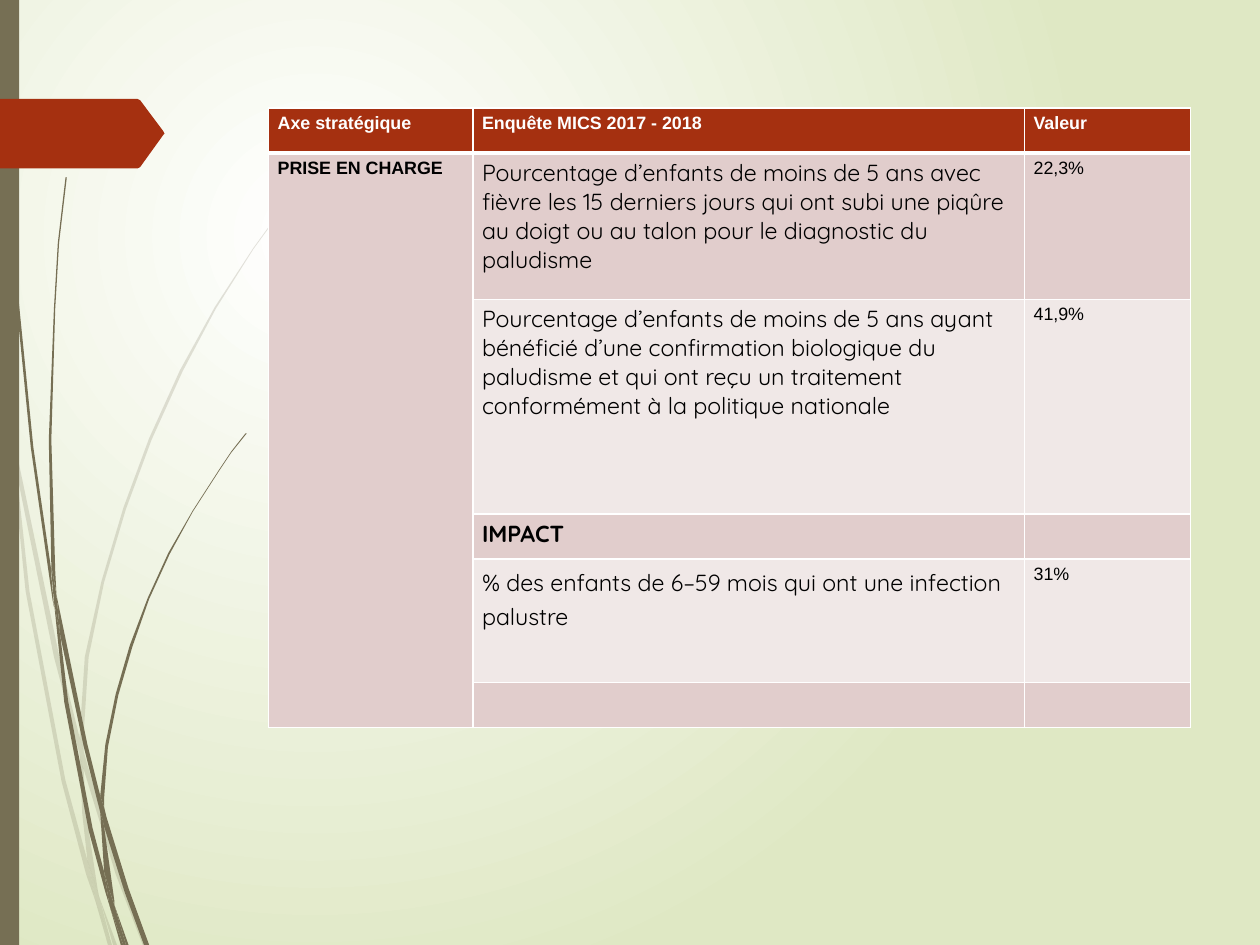
"""Build a slide with a malaria survey table beside a grass motif."""
from dataclasses import dataclass

from lxml import etree
from pptx import Presentation, util as u
from pptx.dml.color import RGBColor
from pptx.enum import shapes
from pptx.oxml import ns

Point = tuple[float, float]


@dataclass(frozen=True)
class Theme:
    olive: str = "766F54"
    brick: str = "A53010"
    rose: str = "E1CDCC"
    pale: str = "F0E8E7"
    white: str = "FFFFFF"
    black: str = "000000"
    meadow: str = "DFE8C4"
    label_font: str = "Arial"
    body_font: str = "Quicksand"
    label_size: int = 10
    body_size: int = 13
    rule: int = 1
    header_rule: int = 3


@dataclass(frozen=True)
class Cell:
    text: str = ""
    body: bool = False
    bold: bool = False
    spacing: float | None = None


@dataclass(frozen=True)
class Row:
    height: float
    cells: tuple[Cell, ...]


T = Theme()
WIDTH, HEIGHT = 9.8, 7.35
COLUMNS = (1.59, 4.29, 1.29)

ROWS = (
    Row(0.35, (Cell("Axe stratégique", bold=True), Cell("Enquête MICS 2017 - 2018", bold=True),
               Cell("Valeur", bold=True))),
    Row(1.14, (Cell("PRISE EN CHARGE", bold=True),
               Cell("Pourcentage d’enfants de moins de 5 ans avec fièvre les 15 derniers jours qui ont "
                    "subi une piqûre au doigt ou au talon pour le diagnostic du paludisme", body=True),
               Cell("22,3%"))),
    Row(1.67, (Cell(),
               Cell("Pourcentage d’enfants de moins de 5 ans ayant bénéficié d’une confirmation biologique "
                    "du paludisme et qui ont reçu un traitement conformément à la politique nationale",
                    body=True),
               Cell("41,9%"))),
    Row(0.35, (Cell(), Cell("IMPACT", body=True, bold=True), Cell())),
    Row(0.96, (Cell(),
               Cell("% des enfants de 6–59 mois qui ont une infection palustre", body=True, spacing=1.15),
               Cell("31%"))),
    Row(0.35, (Cell(), Cell(), Cell())),
)

FAINT_BLADES: tuple[tuple[Point, ...], ...] = (
    ((0.08, 3.43), (0.06, 3.15), (0, 2.76), (0, 2.93), (0.07, 3.37)),
    ((0.42, 5.11), (0.62, 5.87), (0.62, 5.74), (0.46, 5.1), (0.1, 3.38), (0.13, 3.68)),
    ((0.68, 5.95), (0.65, 5.84), (0.65, 5.98), (0.9, 6.8), (1.11, 7.35), (1.14, 7.35), (0.93, 6.78)),
    ((0.88, 7.35), (0.91, 7.35), (0.77, 6.97)),
    ((0.68, 6.69), (0.51, 6.07), (0.23, 4.6), (0.13, 3.68), (0.08, 3.43), (0.2, 4.6), (0.48, 6.08),
     (0.67, 6.8), (0.74, 7), (0.73, 6.93)),
    ((0.62, 5.87), (0.64, 6.33), (0.68, 6.69), (0.71, 6.78), (0.77, 6.97), (0.76, 6.92), (0.67, 6.33),
     (0.65, 5.98), (0.64, 5.96)),
    ((0.65, 5.72), (0.69, 5.11), (0.81, 4.53), (0.98, 3.96), (1.18, 3.42), (1.42, 2.89), (1.68, 2.4),
     (1.97, 1.94), (2.13, 1.72), (2.29, 1.5), (2.13, 1.71), (1.97, 1.93), (1.67, 2.39), (1.4, 2.88),
     (1.16, 3.41), (0.96, 3.95), (0.79, 4.52), (0.66, 5.11), (0.62, 5.72), (0.62, 5.74), (0.65, 5.84)),
    ((0.74, 7), (0.84, 7.35), (0.87, 7.35)),
    ((0.64, 5.96), (0.65, 5.98), (0.65, 5.84), (0.62, 5.74), (0.62, 5.87)),
    ((0.71, 6.78), (0.68, 6.69), (0.73, 6.93), (0.74, 7), (0.87, 7.35), (0.77, 6.97)),
)

BLADES: tuple[tuple[Point, ...], ...] = (
    ((0.05, 1.08), (0.12, 2.28), (0.24, 3.48), (0.41, 4.67), (0.42, 4.72), (0.4, 4.48), (0.4, 4.44),
     (0.26, 3.48), (0.14, 2.28), (0.06, 1.07), (0.03, 0.47), (0.03, 0), (0.02, 0), (0.03, 0.47)),
    ((0.65, 5.8), (0.78, 6.32), (0.78, 6.21), (0.78, 6.19), (0.68, 5.79), (0.44, 4.63), (0.47, 4.95)),
    ((0.83, 6.36), (0.81, 6.28), (0.81, 6.43), (0.97, 6.94), (1.12, 7.35), (1.16, 7.35), (1, 6.91)),
    ((0.81, 6.78), (0.72, 6.44), (0.53, 5.45), (0.47, 4.95), (0.42, 4.68), (0.5, 5.46), (0.69, 6.46),
     (0.82, 6.94), (0.86, 7.07), (0.85, 7.03)),
    ((0.44, 4.63), (0.43, 4.44), (0.4, 3.42), (0.43, 2.4), (0.46, 1.89), (0.52, 1.38), (0.51, 1.38),
     (0.45, 1.89), (0.42, 2.4), (0.38, 3.42), (0.4, 4.4), (0.44, 4.62)),
    ((0.98, 7.35), (1, 7.35), (0.89, 7.04)),
    ((0.42, 4.68), (0.47, 4.95), (0.44, 4.63), (0.4, 4.4), (0.4, 4.44)),
    ((0.81, 6.21), (0.84, 5.81), (0.92, 5.41), (1.03, 5.03), (1.16, 4.66), (1.32, 4.31), (1.5, 3.98),
     (1.7, 3.67), (1.8, 3.52), (1.92, 3.37), (1.91, 3.37), (1.8, 3.51), (1.7, 3.66), (1.5, 3.97),
     (1.31, 4.3), (1.15, 4.65), (1.01, 5.02), (0.9, 5.4), (0.82, 5.79), (0.78, 6.19), (0.81, 6.28)),
    ((0.86, 7.07), (0.94, 7.35), (0.96, 7.35)),
    ((0.78, 6.32), (0.81, 6.78), (0.85, 6.92), (0.89, 7.04), (0.89, 7.01), (0.81, 6.43), (0.8, 6.38)),
    ((0.78, 6.32), (0.8, 6.38), (0.81, 6.43), (0.81, 6.28), (0.78, 6.19), (0.78, 6.21)),
    ((0.85, 6.92), (0.81, 6.78), (0.85, 7.03), (0.86, 7.07), (0.96, 7.35), (0.98, 7.35), (0.89, 7.04)),
)

PAGE_TAG: tuple[Point, ...] = (
    (1.27, 1.05), (1.09, 1.3), (1.07, 1.31), (0, 1.31), (0, 0.77), (1.07, 0.77), (1.09, 0.78),
    (1.27, 1.02), (1.28, 1.04))


def rgb(color: str) -> RGBColor:
    return RGBColor.from_string(color)


def add_xml(parent, tag: str, **attrs):
    return etree.SubElement(parent, ns.qn(tag), {k: str(v) for k, v in attrs.items()})


def paint_background(s) -> None:
    fill = s.background.fill
    fill.gradient()
    for stop, color in zip(fill.gradient_stops, (T.white, T.meadow)):
        stop.color.rgb = rgb(color)
    grad = s.background._cSld.find(".//" + ns.qn("a:gradFill"))
    grad.remove(grad.find(ns.qn("a:lin")))
    circle = add_xml(grad, "a:path", path="circle")
    add_xml(circle, "a:fillToRect", l=50000, t=50000, r=100000, b=100000)


def paint(sp, color: str, opacity: int = 100) -> None:
    sp.shadow.inherit = False
    sp.fill.solid()
    sp.fill.fore_color.rgb = rgb(color)
    sp.line.fill.background()
    if opacity < 100:
        clr = sp._element.spPr.find(".//" + ns.qn("a:srgbClr"))
        add_xml(clr, "a:alpha", val=opacity * 1000)


def add_outline(s, points: tuple[Point, ...], color: str, opacity: int = 100) -> None:
    start, *rest = [(u.Inches(x), u.Inches(y)) for x, y in points]
    builder = s.shapes.build_freeform(*start)
    builder.add_line_segments(rest, close=True)
    paint(builder.convert_to_shape(), color, opacity)


def set_borders(cell, top: int, bottom: int) -> None:
    tc_pr = cell._tc.get_or_add_tcPr()
    for side, width in (("L", T.rule), ("R", T.rule), ("T", top), ("B", bottom)):
        ln = add_xml(tc_pr, f"a:ln{side}", w=u.Pt(width))
        add_xml(add_xml(ln, "a:solidFill"), "a:srgbClr", val=T.white)


def fill_cell(cell, data: Cell, row: int) -> None:
    set_borders(cell, T.header_rule if row == 1 else T.rule, T.header_rule if row == 0 else T.rule)
    cell.fill.solid()
    cell.fill.fore_color.rgb = rgb(T.brick if row == 0 else T.rose if row % 2 else T.pale)
    cell.margin_left = cell.margin_right = u.Inches(0.07)
    cell.margin_top = cell.margin_bottom = u.Inches(0.04)
    p = cell.text_frame.paragraphs[0]
    size = T.body_size if data.body else T.label_size
    if data.text:
        p.text = data.text
    else:
        p._p.get_or_add_endParaRPr().set("sz", str(size * 100))
    if data.spacing:
        p.line_spacing = data.spacing
    p.font.name = T.body_font if data.body else T.label_font
    p.font.size = u.Pt(size)
    p.font.bold = data.bold
    p.font.color.rgb = rgb(T.black if row else T.white)


def add_survey_table(s) -> None:
    total = sum(row.height for row in ROWS)
    table = s.shapes.add_table(len(ROWS), len(COLUMNS), u.Inches(2.09), u.Inches(0.84),
                               u.Inches(sum(COLUMNS)), u.Inches(total)).table
    for column, width in zip(table.columns, COLUMNS):
        column.width = u.Inches(width)
    for i, row in enumerate(ROWS):
        table.rows[i].height = u.Inches(row.height)
        for j, data in enumerate(row.cells):
            fill_cell(table.cell(i, j), data, i)
    table.cell(1, 0).merge(table.cell(len(ROWS) - 1, 0))


def main() -> None:
    prs = Presentation()
    prs.slide_width, prs.slide_height = u.Inches(WIDTH), u.Inches(HEIGHT)
    s = prs.slides.add_slide(prs.slide_layouts[6])
    paint_background(s)
    for blade in FAINT_BLADES:
        add_outline(s, blade, T.olive, opacity=20)
    for blade in BLADES:
        add_outline(s, blade, T.olive)
    band = s.shapes.add_shape(shapes.MSO_SHAPE.RECTANGLE, 0, 0, u.Inches(0.15), u.Inches(HEIGHT))
    paint(band, T.olive)
    add_outline(s, PAGE_TAG, T.brick)
    add_survey_table(s)
    prs.save("out.pptx")


if __name__ == "__main__":
    main()
